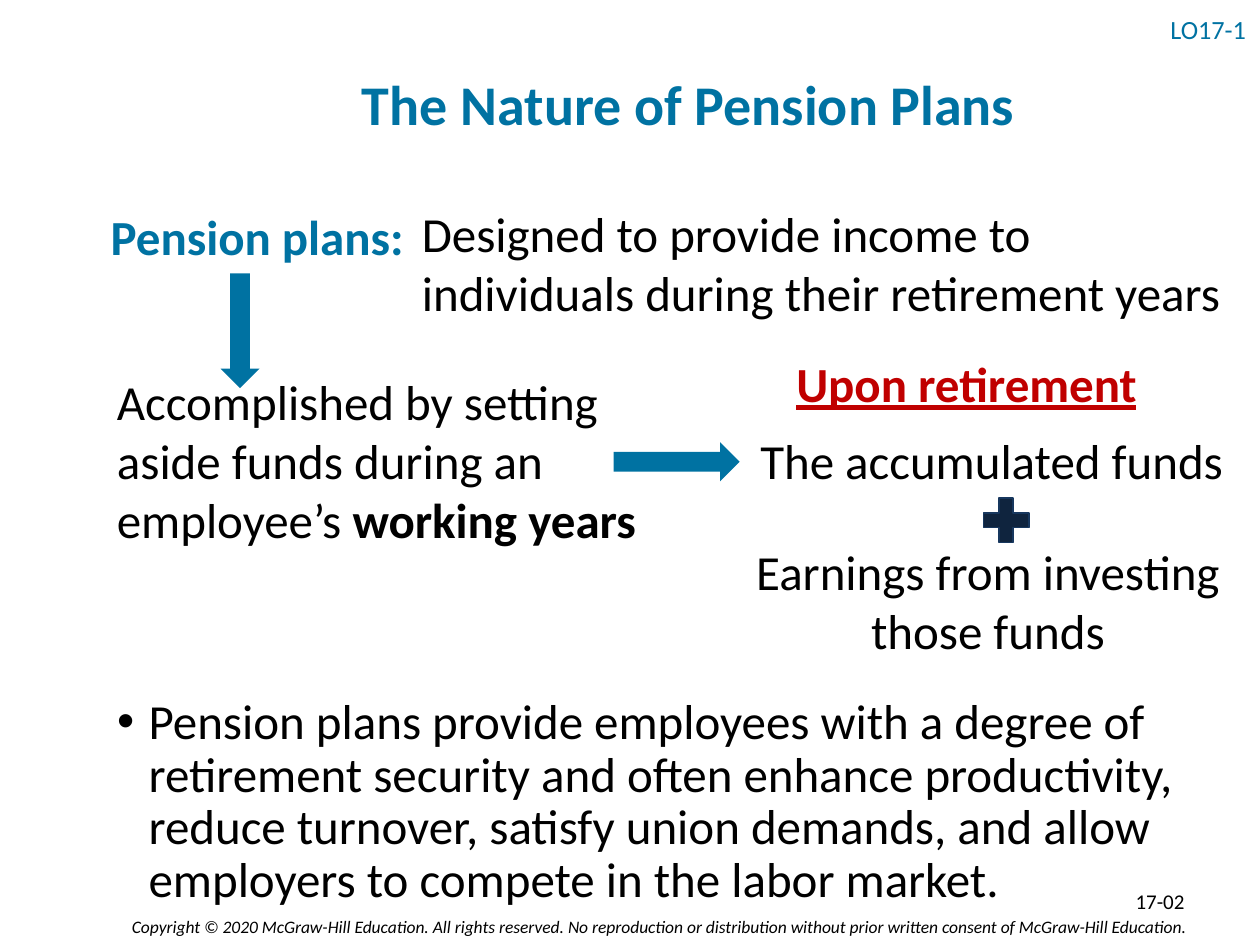
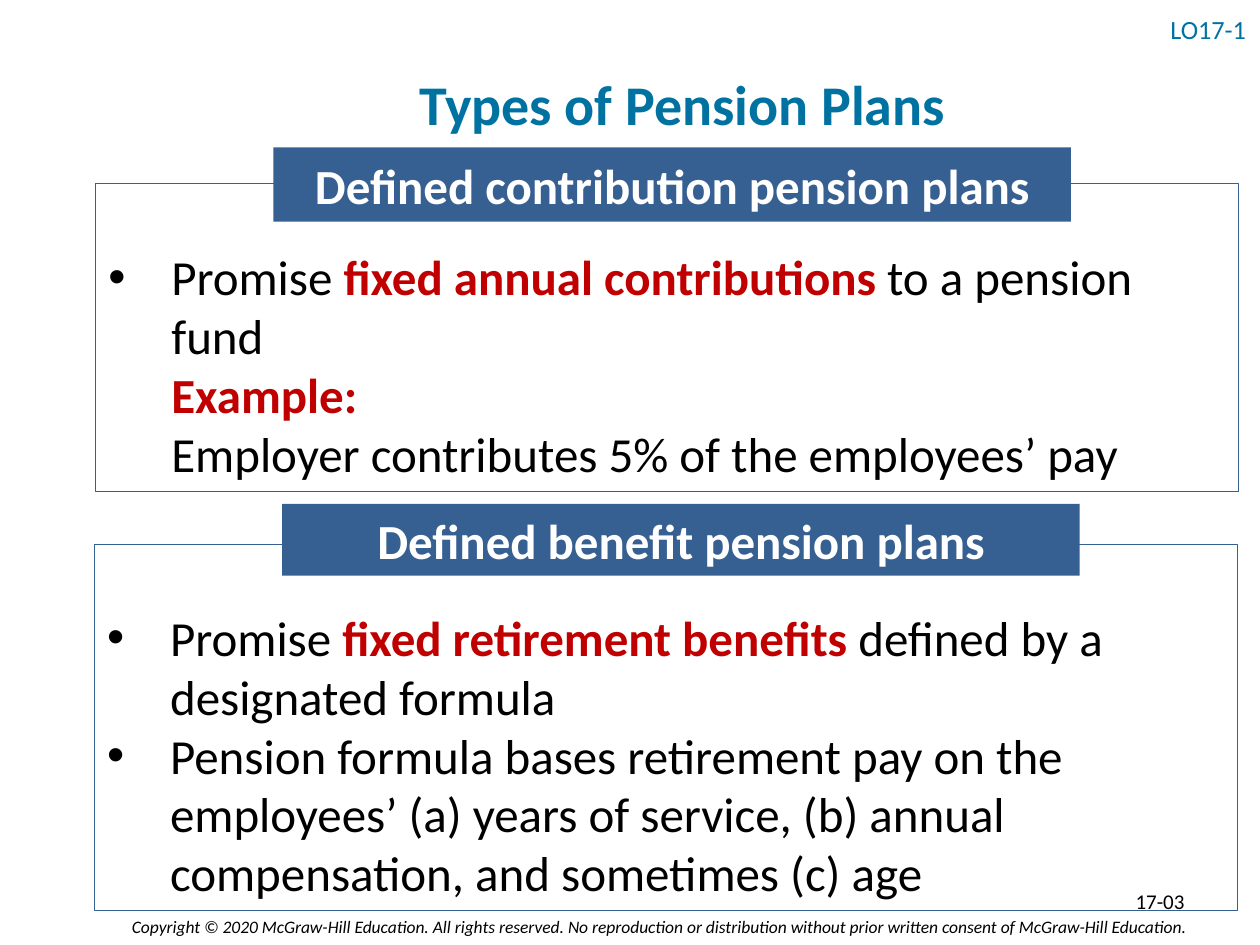
from lxml import etree
from pptx import Presentation
from pptx.dml.color import RGBColor
from pptx.enum import shapes as shp, text as txt
from pptx.oxml import ns
from pptx.util import Inches, Pt

TEAL = RGBColor(0x00, 0x72, 0xA2)
BLUE = RGBColor(0x37, 0x60, 0x92)
NAVY = RGBColor(0x0F, 0x24, 0x3E)
EDGE = RGBColor(0x17, 0x37, 0x5E)
RED = RGBColor(0xC0, 0x00, 0x00)
BLACK = RGBColor(0, 0, 0)
WHITE = RGBColor(255, 255, 255)
FACE = "Calibri"
SIZE = 28
ALIGN = txt.PP_ALIGN
ANCHOR = txt.MSO_ANCHOR
LEGAL = ("Copyright © 2020 McGraw-Hill Education. All rights reserved. "
         "No reproduction or distribution without prior written consent "
         "of McGraw-Hill Education.")


def style(font, color=BLACK, bold=False, size=SIZE):
    font.name, font.size, font.bold = FACE, Pt(size), bold
    font.color.rgb = color


def place(shape, box):
    shape.left, shape.top, shape.width, shape.height = map(Inches, box)


def fill_par(par, parts):
    """Write runs given as (words, colour, bold)."""
    for words, color, bold in parts:
        run = par.add_run()
        run.text = words
        style(run.font, color, bold)


def label(slide, box, words, color=BLACK, bold=False, size=SIZE,
          align=ALIGN.LEFT, anchor=ANCHOR.TOP, wrap=True):
    """Add a text box with one paragraph and return the paragraph."""
    frame = slide.shapes.add_textbox(*map(Inches, box)).text_frame
    frame.word_wrap = wrap
    frame.vertical_anchor = anchor
    par = frame.paragraphs[0]
    par.text = words
    par.alignment = align
    style(par.font, color, bold, size)
    for run in par.runs:
        style(run.font, color, bold, size)
    return par


def solid(slide, kind, box, fill, line=None):
    shape = slide.shapes.add_shape(kind, *map(Inches, box))
    shape.shadow.inherit = False
    shape.fill.solid()
    shape.fill.fore_color.rgb = fill
    if line is None:
        shape.line.fill.background()
    else:
        shape.line.color.rgb = line
        shape.line.width = Pt(1)
    return shape


def indent(par, left, bullet):
    """Hang the bullet by the left indent, or indent without a bullet."""
    props = par._p.get_or_add_pPr()
    props.set("marL", str(Inches(left)))
    props.set("indent", str(Inches(-left if bullet else 0)))
    if bullet:
        etree.SubElement(props, ns.qn("a:buChar")).set("char", "•")
    else:
        etree.SubElement(props, ns.qn("a:buNone"))


def fill_list(holder, box, items, left, top=0.05, spacing=1.0):
    """Fill a body placeholder with items given as (bullet, parts)."""
    place(holder, box)
    frame = holder.text_frame
    frame.auto_size = txt.MSO_AUTO_SIZE.NONE
    frame.vertical_anchor = ANCHOR.TOP
    frame.margin_top = Inches(top)
    for i, (bullet, parts) in enumerate(items):
        par = frame.add_paragraph() if i else frame.paragraphs[0]
        indent(par, left, bullet)
        par.space_before = Pt(0)
        par.line_spacing = spacing
        fill_par(par, parts)


def base(deck, layout, title, page, left=0.83):
    """Start a slide with its title, goal tag, page number and footer."""
    slide = deck.slides.add_slide(deck.slide_layouts[layout])
    head = slide.shapes.title
    place(head, (left, 0, 9.17, 1.58))
    frame = head.text_frame
    frame.text = title
    frame.auto_size = txt.MSO_AUTO_SIZE.NONE
    frame.vertical_anchor = ANCHOR.MIDDLE
    par = frame.paragraphs[0]
    par.alignment = ALIGN.CENTER
    par.line_spacing = 1.1
    style(par.runs[0].font, TEAL, True, 32)

    legal = label(slide, (0.45, 7.22, 9.06, 0.27), LEGAL, size=10,
                  align=ALIGN.RIGHT)
    legal.runs[0].font.italic = True
    goal = label(slide, (9.19, 0.05, 0.81, 0.4), "LO17-1", TEAL, size=15,
                 anchor=ANCHOR.MIDDLE)
    goal.line_spacing = 0.9
    label(slide, (7.17, 6.95, 2.33, 0.4), page, size=12,
          align=ALIGN.RIGHT, anchor=ANCHOR.MIDDLE)
    return slide


def nature(deck):
    slide = base(deck, 1, "The Nature of Pension Plans", "17-02", 0.88)
    kinds = shp.MSO_SHAPE

    # Closing bullet
    point = ("Pension plans provide employees with a degree of retirement "
             "security and often enhance productivity, reduce turnover, "
             "satisfy union demands, and allow employers to compete in the "
             "labor market.")
    fill_list(slide.placeholders[1], (0.83, 5.48, 8.76, 2.02),
              [(True, [(point, BLACK, False)])], 0.25, spacing=0.9)

    # Purpose and means
    label(slide, (0.78, 1.59, 2.55, 0.57), "Pension plans:", TEAL, True,
          wrap=False)
    label(slide, (3.25, 1.57, 6.75, 1.04),
          "Designed to provide income to individuals during their "
          "retirement years")
    means = label(slide, (0.83, 2.9, 4.33, 1.51), "")
    fill_par(means, [("Accomplished by setting aside funds during an "
                      "employee’s ", BLACK, False),
                     ("working years", BLACK, True)])

    # Funds at retirement
    when = label(slide, (6.08, 2.76, 3.18, 0.57), "Upon retirement", RED,
                 True, align=ALIGN.CENTER)
    when.runs[0].font.underline = True
    for box, words in (
            ((5.83, 3.37, 4.08, 0.57), "The accumulated funds"),
            ((5.65, 4.25, 4.38, 1.04), "Earnings from investing those funds")):
        label(slide, box, words, align=ALIGN.CENTER)

    # Arrows and plus sign
    solid(slide, kinds.DOWN_ARROW, (1.75, 2.17, 0.31, 0.91), TEAL)
    solid(slide, kinds.RIGHT_ARROW, (4.87, 3.51, 1, 0.31), TEAL)
    solid(slide, kinds.MATH_PLUS, (7.74, 3.89, 0.49, 0.48), NAVY, EDGE)


def panel(slide, holder, box, items, band, name):
    """Outline a list and set a name band, relative to it, on its top edge."""
    fill_list(holder, box, items, 0.5, top=0.5)
    holder.line.color.rgb = BLUE
    holder.line.width = Pt(0.5)
    dx, dy, high = band
    bar = solid(slide, shp.MSO_SHAPE.RECTANGLE,
                (box[0] + dx, box[1] + dy, 6.33, high), BLUE)
    frame = bar.text_frame
    frame.text = name
    frame.vertical_anchor = ANCHOR.MIDDLE
    par = frame.paragraphs[0]
    par.alignment = ALIGN.CENTER
    style(par.runs[0].font, WHITE, True)


def types(deck):
    slide = base(deck, 3, "Types of Pension Plans", "17-03")

    # Contribution plans
    panel(slide, slide.placeholders[1], (0.76, 1.46, 9.07, 2.44), [
        (True, [("Promise ", BLACK, False),
                ("fixed annual contributions ", RED, True),
                ("to a pension fund", BLACK, False)]),
        (False, [("Example:", RED, True)]),
        (False, [("Employer contributes 5% of the employees’ pay",
                  BLACK, False)]),
    ], (1.41, -0.29, 0.59), "Defined contribution pension plans")

    # Benefit plans
    panel(slide, slide.placeholders[2], (0.75, 4.32, 9.07, 2.91), [
        (True, [("Promise ", BLACK, False),
                ("fixed retirement benefits ", RED, True),
                ("defined by a designated formula", BLACK, False)]),
        (True, [("Pension formula bases retirement pay on the employees’ "
                 "(a) years of service, (b) annual compensation, and "
                 "sometimes (c) age", BLACK, False)]),
    ], (1.49, -0.32, 0.57), "Defined benefit pension plans")


def main():
    deck = Presentation()
    deck.slide_width, deck.slide_height = Inches(10), Inches(7.5)
    nature(deck)
    types(deck)
    deck.save("out.pptx")


if __name__ == "__main__":
    main()
